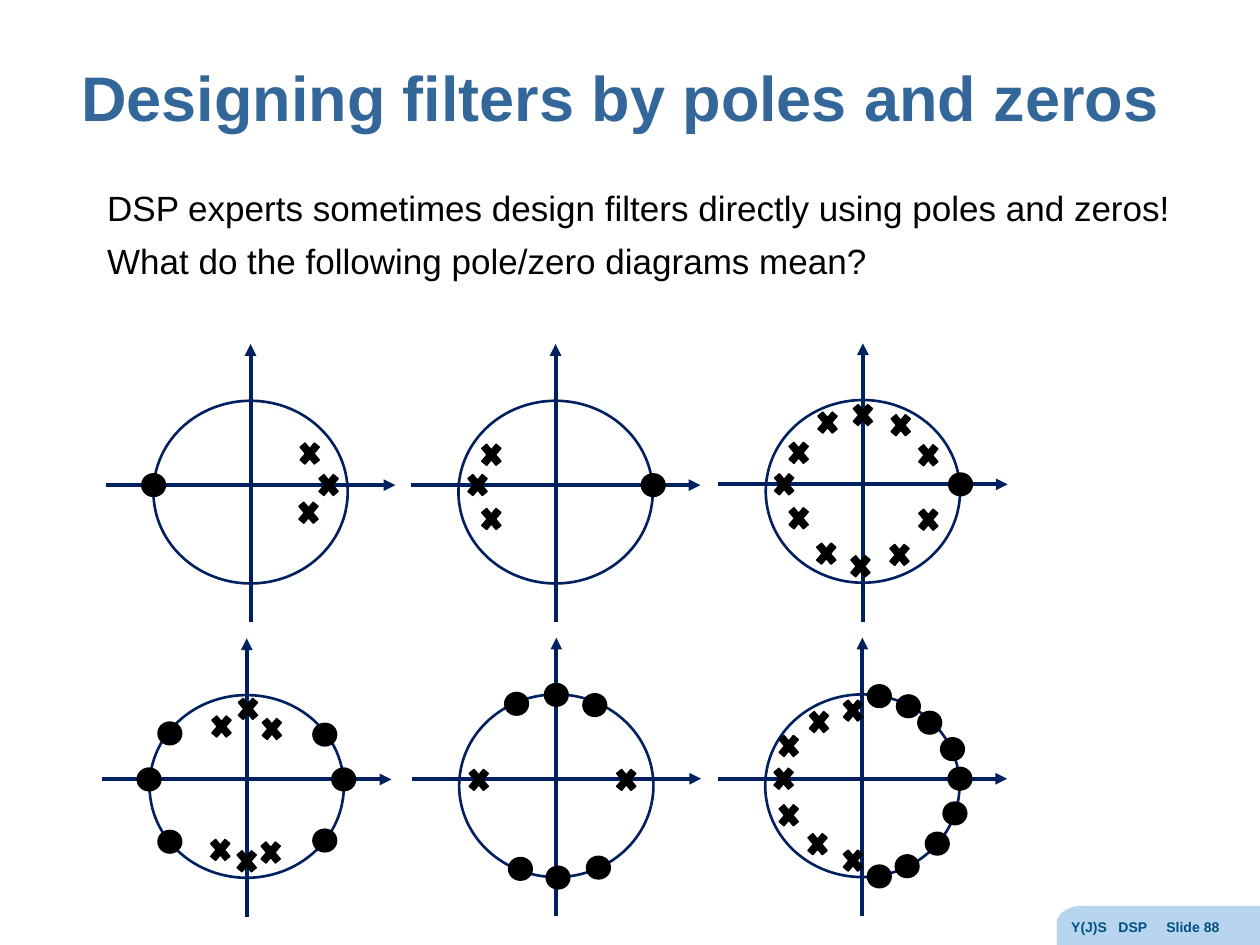
from dataclasses import dataclass

from pptx import Presentation
from pptx.dml.color import RGBColor
from pptx.enum import shapes, text
from pptx.oxml.ns import qn
from pptx.util import Pt
from lxml import etree


@dataclass(frozen=True)
class Theme:
    font: str = "Arial"
    title_color: RGBColor = RGBColor(0x33, 0x66, 0x99)
    ink: RGBColor = RGBColor(0, 0, 0)
    axis: RGBColor = RGBColor(0x00, 0x20, 0x60)
    footer_fill: RGBColor = RGBColor(0xB7, 0xD5, 0xEF)
    footer_text: RGBColor = RGBColor(0x00, 0x50, 0x81)
    title_size: float = 36
    body_size: float = 20
    footer_size: float = 8


THEME = Theme()

AXIS_WIDTH, AXIS_HEIGHT = 165.4, 159
ORIGIN_DROP = 80.6  # from the top of a diagram to its horizontal axis
CIRCLE_SIZE, CIRCLE_DROP = (111, 104.4), 4
ZERO_SIZE = (14.4, 13.8)
POLE_SIZE = (15.8, 18.7)

# Each diagram: box left and top, then zeros and poles as offsets from the origin.
DIAGRAMS = [
    (60.5, 196.6,
     [(-55.4, 0)],
     [(44.6, 0), (33.8, -18), (33.1, 15.8)]),
    (234.8, 196.6,
     [(55.8, 0)],
     [(-44.6, 0), (-36.7, -17.3), (-36.7, 19.4)]),
    (410.4, 196.2,
     [(55.8, 0)],
     [(-45, 0), (-36.7, -18), (-36.7, 19.4), (-20.9, 39.6), (-20.2, -35.3),
      (-1.4, 46.8), (0, -39.6), (20.9, 40.3), (21.6, -33.8), (37.4, -16.6),
      (37.4, 20.2)]),
    (58.3, 364.8,
     [(55.4, 0), (-55.8, 0), (44.6, -25.6), (44.6, 34.9), (-43.9, -26.3),
      (-43.9, 35.6)],
     [(0.7, -40.3), (-14.4, -30.2), (14.4, -28.8), (0, 46.8), (-15.1, 40.3),
      (13.7, 41.8)]),
    (235.2, 364.4,
     [(22, -42.1), (1, 56.5), (0, -47.9), (24.1, 50.8), (-22.7, -42.8),
      (-20.5, 51.5)],
     [(40, 0.7), (-44.3, 0.7)]),
    (410.1, 364.4,
     [(55.8, 0), (51.5, -16.9), (52.9, 19.8), (38.5, -32), (42.8, 37.1),
      (26.3, -41.4), (25.6, 50), (9.7, -47.2), (9.7, 55.8)],
     [(-45, 0), (-42.1, -18.7), (-42.1, 20.9), (-25.6, 37.4), (-24.8, -32.4),
      (-5.4, 46.8), (-5.4, -38.9)]),
]


def place(shape, left, top, width, height):
    shape.left, shape.top = Pt(left), Pt(top)
    shape.width, shape.height = Pt(width), Pt(height)


def add_run(paragraph, wording, size, color, bold=False):
    run = paragraph.add_run()
    run.text = wording
    font = run.font
    font.name, font.size, font.bold = THEME.font, Pt(size), bold
    font.color.rgb = color


def add_title(placeholder, box, wording):
    place(placeholder, *box)
    frame = placeholder.text_frame
    frame.auto_size = text.MSO_AUTO_SIZE.NONE
    frame.vertical_anchor = text.MSO_ANCHOR.MIDDLE
    paragraph = frame.paragraphs[0]
    paragraph.alignment = text.PP_ALIGN.CENTER
    paragraph.line_spacing = 0.9
    add_run(paragraph, wording, THEME.title_size, THEME.title_color, bold=True)


def add_body(placeholder, box, lines):
    place(placeholder, *box)
    frame = placeholder.text_frame
    frame.auto_size = text.MSO_AUTO_SIZE.NONE
    frame.vertical_anchor = text.MSO_ANCHOR.TOP
    for index, line in enumerate(lines):
        paragraph = frame.add_paragraph() if index else frame.paragraphs[0]
        paragraph.space_before = Pt(6)
        properties = paragraph._p.get_or_add_pPr()
        properties.set("marL", "0")
        properties.set("indent", "0")
        etree.SubElement(properties, qn("a:buNone"))
        add_run(paragraph, line, THEME.body_size, THEME.ink)


def add_axis(group, start, end):
    axis = group.shapes.add_connector(
        shapes.MSO_CONNECTOR.STRAIGHT, *map(Pt, start + end))
    axis.line.color.rgb = THEME.axis
    axis.line.width = Pt(2.25)
    etree.SubElement(axis.line._get_or_add_ln(), qn("a:tailEnd"), type="triangle")
    etree.SubElement(axis._element.spPr, qn("a:effectLst"))


def add_centered(group, kind, center, size, fill=None, line=None, line_width=0.75):
    """Add a preset shape around a center; no colour means no fill or no line."""
    (x, y), (width, height) = center, size
    shape = group.shapes.add_shape(
        kind, Pt(x - width / 2), Pt(y - height / 2), Pt(width), Pt(height))
    shape.shadow.inherit = False
    if fill is None:
        shape.fill.background()
    else:
        shape.fill.solid()
        shape.fill.fore_color.rgb = fill
    if line is None:
        shape.line.fill.background()
    else:
        shape.line.color.rgb = line
        shape.line.width = Pt(line_width)


def add_pole_zero_diagram(slide, left, top, zeros, poles):
    group = slide.shapes.add_group_shape()
    x, y = left + AXIS_WIDTH / 2, top + ORIGIN_DROP
    oval = shapes.MSO_SHAPE.OVAL
    add_axis(group, (x, top + AXIS_HEIGHT), (x, top))
    add_axis(group, (left, y), (left + AXIS_WIDTH, y))
    add_centered(group, oval, (x, y + CIRCLE_DROP), CIRCLE_SIZE,
                 line=THEME.axis, line_width=1.5)
    for across, down in zeros:
        add_centered(group, oval, (x + across, y + down), ZERO_SIZE, fill=THEME.ink)
    for across, down in poles:
        add_centered(group, shapes.MSO_SHAPE.MATH_MULTIPLY, (x + across, y + down),
                     POLE_SIZE, fill=THEME.ink, line=THEME.ink)


def add_footer(slide, left, top, width, height, parts):
    corner = [(0, 10.8), (0, 7.9), (2.2, 4.3), (5, 2.2), (8.6, 0.7), (11.5, 0)]
    outline = [(width, 0), (width, height), (0, height)] + corner
    points = [(Pt(left + x), Pt(top + y)) for x, y in outline]
    builder = slide.shapes.build_freeform(*points[0])
    builder.add_line_segments(points[1:], close=True)
    tab = builder.convert_to_shape()
    tab.shadow.inherit = False
    tab.fill.solid()
    tab.fill.fore_color.rgb = THEME.footer_fill
    tab.line.fill.background()

    label = slide.shapes.add_textbox(
        Pt(left + 1), Pt(top + 3.6), Pt(width - 1), Pt(18.7))
    label.text_frame.word_wrap = True
    paragraph = label.text_frame.paragraphs[0]
    stops = etree.SubElement(paragraph._p.get_or_add_pPr(), qn("a:tabLst"))
    for position in (27, 54.4):
        etree.SubElement(stops, qn("a:tab"), pos=str(Pt(position)), algn="l")
    add_run(paragraph, "\t".join(parts), THEME.footer_size, THEME.footer_text, bold=True)


def main():
    presentation = Presentation()
    presentation.slide_width, presentation.slide_height = Pt(720), Pt(540)
    slide = presentation.slides.add_slide(presentation.slide_layouts[1])
    add_footer(slide, 604, 517.7, 116, 22.3, ["Y(J)S", "DSP", "Slide 88"])
    add_title(slide.shapes.title, (30.2, 13, 648.7, 90),
              "Designing filters by poles and zeros")
    add_body(slide.placeholders[1], (54, 103, 638.6, 378), [
        "DSP experts sometimes design filters directly using poles and zeros!",
        "What do the following pole/zero diagrams mean?",
    ])
    for diagram in DIAGRAMS:
        add_pole_zero_diagram(slide, *diagram)
    presentation.save("out.pptx")


if __name__ == "__main__":
    main()
